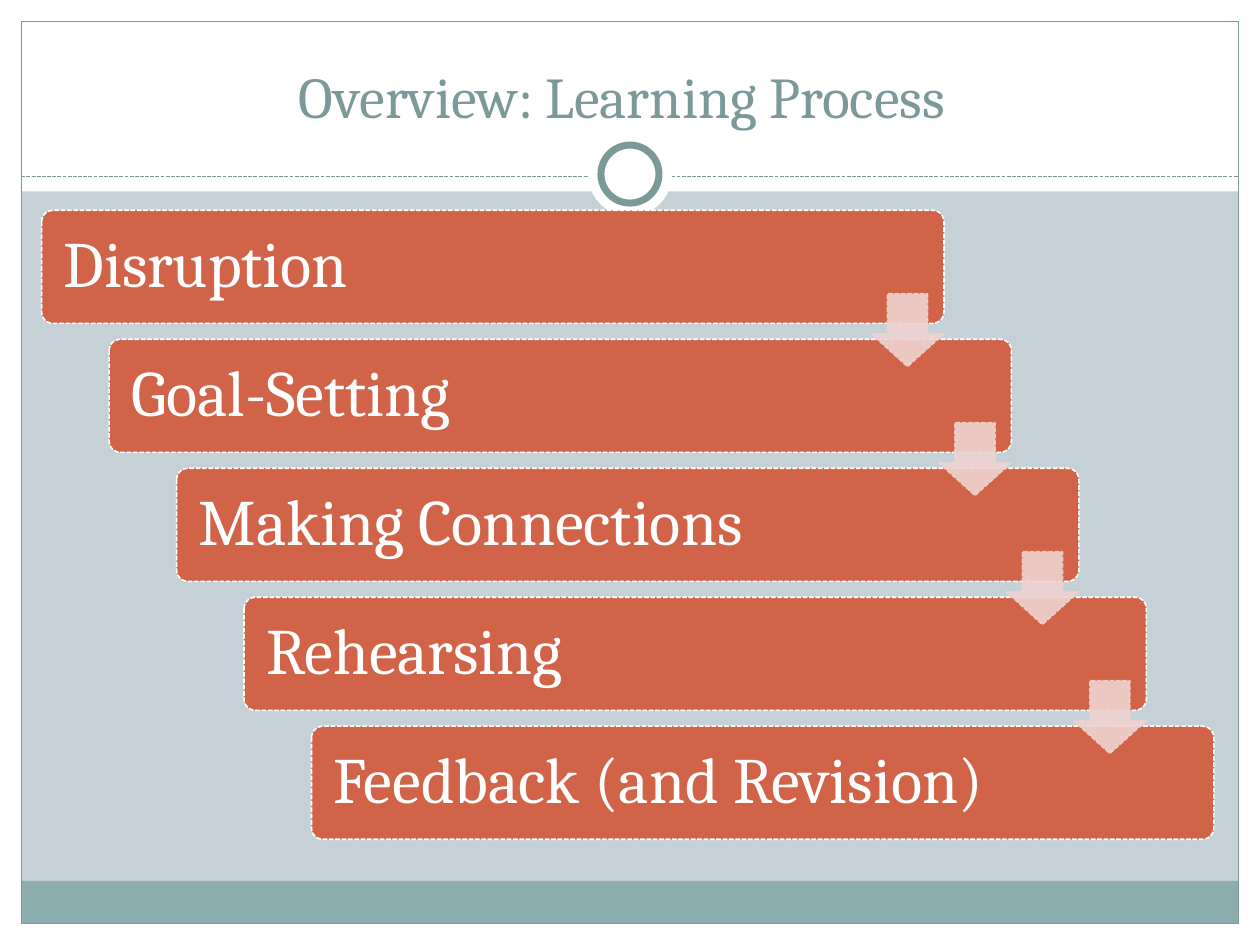
from lxml.etree import SubElement
from pptx import Presentation
from pptx.dml.color import RGBColor
from pptx.enum.dml import MSO_LINE
from pptx.enum.shapes import MSO_CONNECTOR, MSO_SHAPE
from pptx.enum.text import MSO_ANCHOR, PP_ALIGN
from pptx.oxml.ns import qn
from pptx.util import Cm, Pt

TITLE = "Overview: Learning Process"
STEPS = [
    "Disruption",
    "Goal-Setting",
    "Making Connections",
    "Rehearsing",
    "Feedback (and Revision)",
]

WHITE = RGBColor(0xFF, 0xFF, 0xFF)
PALE_BLUE = RGBColor(0xC5, 0xD1, 0xD7)
TEAL = RGBColor(0x8C, 0xAD, 0xAE)
GREY_TEAL = RGBColor(0x7C, 0x99, 0x9A)
RUST = RGBColor(0xD1, 0x63, 0x49)
PINK = RGBColor(0xEE, 0xD3, 0xD0)
FONT = "Cambria"

SLIDE_WIDTH, SLIDE_HEIGHT = 25.4, 19.05
MARGIN = 0.43
HEADER_HEIGHT = 3.86
FOOTER_HEIGHT = 0.86
RULE_TOP = 3.56
RING_CENTRE = 3.51

STEP_LEFT, STEP_TOP = 0.84, 4.24
STEP_WIDTH, STEP_HEIGHT = 18.19, 2.28
SHIFT_RIGHT, SHIFT_DOWN = 1.36, 2.6
ARROW_SIZE, ARROW_DROP = 1.47, 1.68

INNER_WIDTH = SLIDE_WIDTH - 2 * MARGIN
INNER_HEIGHT = SLIDE_HEIGHT - 2 * MARGIN
BOTTOM = SLIDE_HEIGHT - MARGIN

BANDS = [
    (0, BOTTOM, SLIDE_WIDTH, MARGIN, WHITE),
    (0, 0, SLIDE_WIDTH, HEADER_HEIGHT, WHITE),
    (0, 0, MARGIN, SLIDE_HEIGHT, WHITE),
    (SLIDE_WIDTH - MARGIN, 0, MARGIN, SLIDE_HEIGHT, WHITE),
    (MARGIN, BOTTOM - FOOTER_HEIGHT, INNER_WIDTH, FOOTER_HEIGHT, TEAL),
]
RINGS = [(1.7, None, 0), (1.17, GREY_TEAL, 4)]


def add_shape(slide, kind, left, top, width, height, fill=None, line=None,
              weight=0.75, dash=None):
    shape = slide.shapes.add_shape(kind, Cm(left), Cm(top), Cm(width), Cm(height))
    shape.shadow.inherit = False
    if fill is None:
        shape.fill.background()
    else:
        shape.fill.solid()
        shape.fill.fore_color.rgb = fill
    if line is None:
        shape.line.fill.background()
    else:
        shape.line.color.rgb = line
        shape.line.width = Pt(weight)
        if dash:
            shape.line.dash_style = dash
    return shape


def write(shape, text, size, color, alignment, anchor):
    frame = shape.text_frame
    frame.text = text
    frame.word_wrap = True
    frame.vertical_anchor = anchor
    paragraph = frame.paragraphs[0]
    paragraph.alignment = alignment
    font = paragraph.runs[0].font
    font.name = FONT
    font.size = Pt(size)
    font.color.rgb = color
    return frame


def add_frame(slide):
    for left, top, width, height, color in BANDS:
        add_shape(slide, MSO_SHAPE.RECTANGLE, left, top, width, height, color)
    add_shape(slide, MSO_SHAPE.RECTANGLE, MARGIN, MARGIN, INNER_WIDTH,
              INNER_HEIGHT, line=GREY_TEAL)
    rule = slide.shapes.add_connector(
        MSO_CONNECTOR.STRAIGHT, Cm(MARGIN), Cm(RULE_TOP),
        Cm(SLIDE_WIDTH - MARGIN), Cm(RULE_TOP))
    rule.line.color.rgb = GREY_TEAL
    rule.line.width = Pt(0.75)
    rule.line.dash_style = MSO_LINE.SQUARE_DOT
    SubElement(rule._element.spPr, qn("a:effectLst"))
    for size, line, weight in RINGS:
        add_shape(slide, MSO_SHAPE.OVAL, (SLIDE_WIDTH - size) / 2,
                  RING_CENTRE - size / 2, size, size, WHITE, line, weight)


def add_title(slide):
    box = slide.shapes.add_textbox(Cm(0.69), Cm(0.64), Cm(23.7), Cm(2.11))
    write(box, TITLE, 33, GREY_TEAL, PP_ALIGN.CENTER, MSO_ANCHOR.BOTTOM)


def add_step(slide, index, text):
    box = add_shape(slide, MSO_SHAPE.ROUNDED_RECTANGLE,
                    STEP_LEFT + index * SHIFT_RIGHT, STEP_TOP + index * SHIFT_DOWN,
                    STEP_WIDTH, STEP_HEIGHT, RUST, WHITE, 0.9, MSO_LINE.SQUARE_DOT)
    box.adjustments[0] = 0.1
    frame = write(box, text, 37, WHITE, PP_ALIGN.LEFT, MSO_ANCHOR.MIDDLE)
    frame.margin_left = frame.margin_right = Cm(0.38)
    frame.margin_top = frame.margin_bottom = Cm(0.38)
    frame.paragraphs[0].line_spacing = 0.9


def add_arrow(slide, index):
    left = STEP_LEFT + STEP_WIDTH - ARROW_SIZE + index * SHIFT_RIGHT
    top = STEP_TOP + ARROW_DROP + index * SHIFT_DOWN
    arrow = add_shape(slide, MSO_SHAPE.DOWN_ARROW, left, top, ARROW_SIZE, ARROW_SIZE,
                      PINK, PINK, 0.9, MSO_LINE.SQUARE_DOT)
    arrow.adjustments[0] = 0.45
    arrow.adjustments[1] = 0.55
    # python-pptx orders these as head length, shaft width
    arrow.adjustments[0], arrow.adjustments[1] = 0.55, 0.45
    for color in arrow._element.spPr.iter(qn("a:srgbClr")):
        SubElement(color, qn("a:alpha"), val="90000")


def main():
    presentation = Presentation()
    presentation.slide_width = Cm(SLIDE_WIDTH)
    presentation.slide_height = Cm(SLIDE_HEIGHT)
    slide = presentation.slides.add_slide(presentation.slide_layouts[6])
    slide.background.fill.solid()
    slide.background.fill.fore_color.rgb = PALE_BLUE
    add_frame(slide)
    add_title(slide)
    for index, text in enumerate(STEPS):
        add_step(slide, index, text)
    for index in range(len(STEPS) - 1):
        add_arrow(slide, index)
    presentation.save("out.pptx")


if __name__ == "__main__":
    main()
